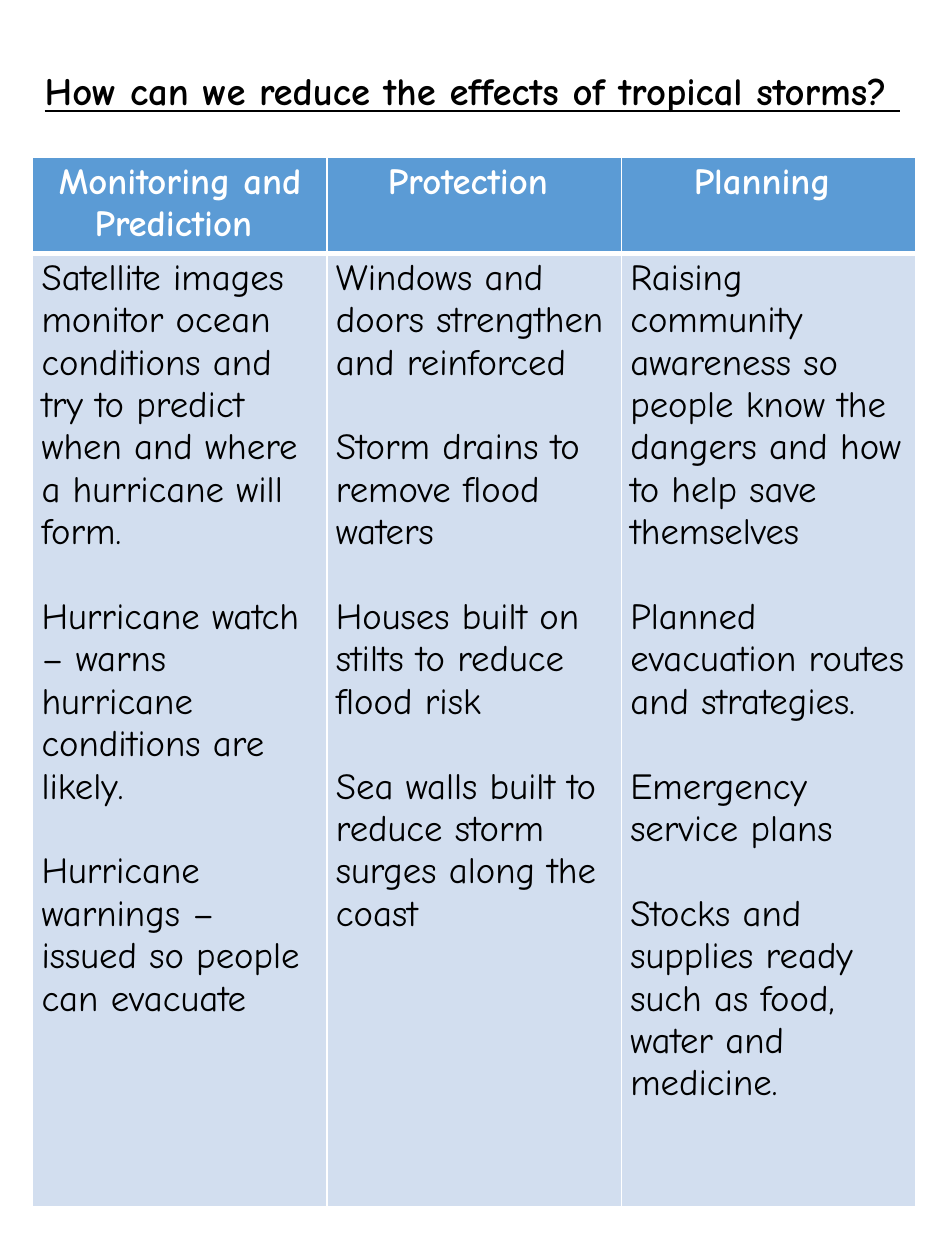
from lxml.etree import SubElement
from pptx import Presentation
from pptx.dml.color import RGBColor
from pptx.enum.text import MSO_ANCHOR, PP_ALIGN
from pptx.oxml.ns import qn
from pptx.util import Inches, Pt

FONT = "Comic Neue"
WIDTH, HEIGHT = Inches(7.5), Inches(10)
BLACK, WHITE = "000000", "FFFFFF"
HEADER_BLUE, BODY_BLUE = "5B9BD5", "D2DEEF"
TEXT_SIZE, PARAGRAPH_GAP = 21, 24.2
HEADER_ROW, BODY_ROW = Inches(0.75), Inches(7.57)

TITLE = "How can we reduce the effects of tropical storms? "
MEASURES = {
    "Monitoring and Prediction ": [
        "Satellite images monitor ocean conditions and try to predict when "
        "and where a hurricane will form.",
        "Hurricane watch – warns hurricane conditions are likely.",
        "Hurricane warnings – issued so people can evacuate",
    ],
    "Protection ": [
        "Windows and doors strengthen and reinforced",
        "Storm drains to remove flood waters",
        "Houses built on stilts to reduce flood risk",
        "Sea walls built to reduce storm surges along the coast",
    ],
    "Planning ": [
        "Raising community awareness so people know the dangers and how to "
        "help save themselves",
        "Planned evacuation routes and strategies.",
        "Emergency service plans",
        "Stocks and supplies ready such as food, water and medicine.",
    ],
}


def color(value):
    return RGBColor.from_string(value)


def style_font(font, size, value, bold=False):
    font.name, font.size, font.bold = FONT, Pt(size), bold
    font.color.rgb = color(value)


def set_borders(cell, top, bottom):
    """Draw white borders; the sides are 1 pt, top and bottom as given."""
    properties = cell._tc.get_or_add_tcPr()
    widths = {"a:lnL": 1, "a:lnR": 1, "a:lnT": top, "a:lnB": bottom}
    for position, (tag, width) in enumerate(widths.items()):
        line = SubElement(properties, qn(tag), w=str(Pt(width)))
        fill = SubElement(line, qn("a:solidFill"))
        SubElement(fill, qn("a:srgbClr"), val=WHITE)
        properties.insert(position, line)  # borders come before the fill


def fill_cell(cell, texts, background, text_color, header):
    cell.fill.solid()
    cell.fill.fore_color.rgb = color(background)
    set_borders(cell, top=1 if header else 3, bottom=3 if header else 1)
    cell.margin_left = cell.margin_right = Inches(0.07)
    cell.margin_top = cell.margin_bottom = Inches(0.03)
    frame = cell.text_frame
    for index, text in enumerate(texts):
        paragraph = frame.add_paragraph() if index else frame.paragraphs[0]
        paragraph.text = text
        paragraph.alignment = PP_ALIGN.CENTER if header else PP_ALIGN.LEFT
        if index:
            paragraph.space_before = Pt(PARAGRAPH_GAP)
        style_font(paragraph.font, TEXT_SIZE, text_color, bold=header)


def add_title(slide, left, top, width, height):
    box = slide.shapes.add_textbox(left, top, width, height)
    frame = box.text_frame
    frame.word_wrap = True
    frame.vertical_anchor = MSO_ANCHOR.MIDDLE
    paragraph = frame.paragraphs[0]
    paragraph.text = TITLE
    paragraph.alignment = PP_ALIGN.CENTER
    paragraph.line_spacing = 0.9
    style_font(paragraph.font, 22.1, BLACK, bold=True)
    paragraph.font.underline = True


def add_measures_table(slide, left, top, width):
    table = slide.shapes.add_table(
        2, len(MEASURES), left, top, width, HEADER_ROW + BODY_ROW).table
    table.rows[0].height, table.rows[1].height = HEADER_ROW, BODY_ROW
    for column, (heading, points) in enumerate(MEASURES.items()):
        fill_cell(table.cell(0, column), [heading], HEADER_BLUE, WHITE, True)
        fill_cell(table.cell(1, column), points, BODY_BLUE, BLACK, False)


def main():
    presentation = Presentation()
    presentation.slide_width, presentation.slide_height = WIDTH, HEIGHT
    slide = presentation.slides.add_slide(presentation.slide_layouts[6])
    add_title(slide, Inches(0.22), Inches(0.24), Inches(7.06), Inches(1))
    add_measures_table(slide, Inches(0.26), Inches(1.25), Inches(7.01))
    presentation.save("out.pptx")


if __name__ == "__main__":
    main()
